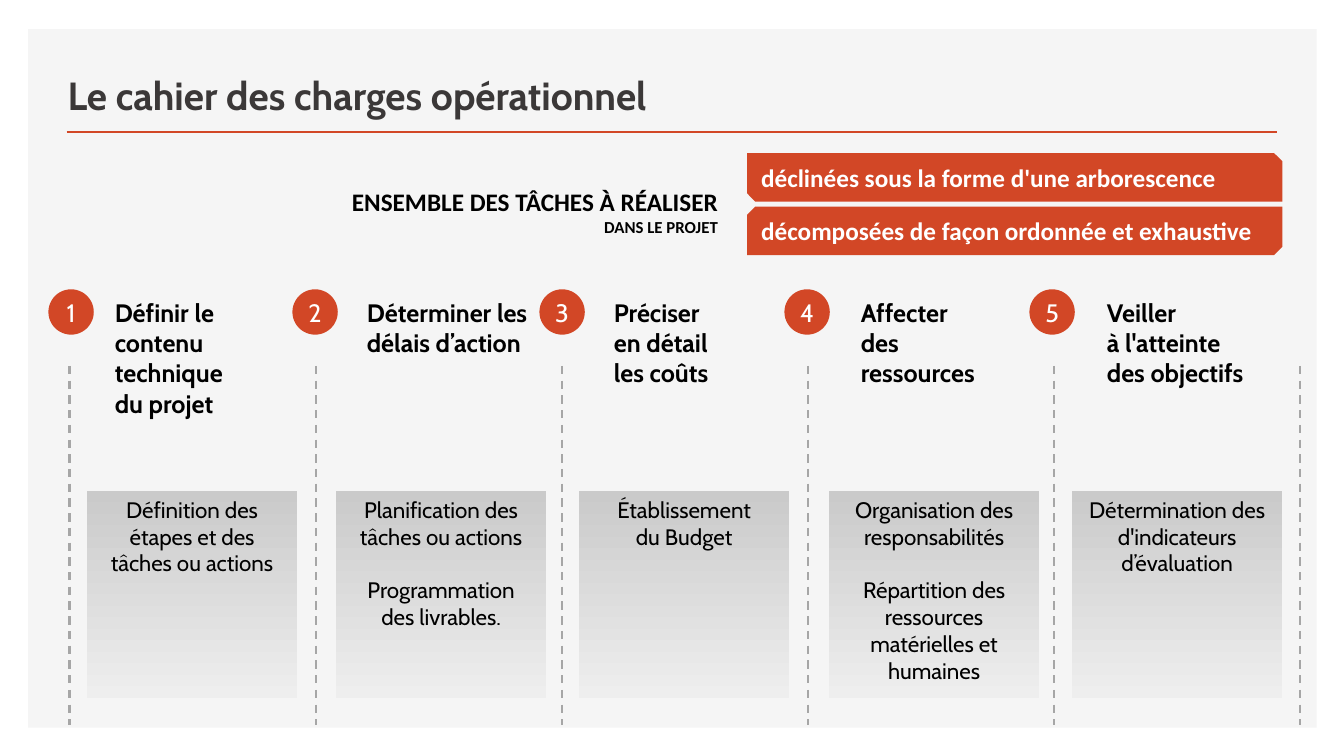
from pptx import Presentation
from pptx.dml.color import RGBColor
from pptx.enum.dml import MSO_LINE
from pptx.enum.shapes import MSO_CONNECTOR, MSO_SHAPE
from pptx.enum.text import MSO_ANCHOR, PP_ALIGN
from pptx.util import Pt
from lxml import etree

# Content
TITLE = "Le cahier des charges opérationnel"
SCOPE = [("ENSEMBLE DES TÂCHES À RÉALISER", 18), ("DANS LE PROJET", 12)]
BANNERS = [  # text, snips of the two diagonals
    ("déclinées sous la forme d'une arborescence", (0, 0.17)),
    ("décomposées de façon ordonnée et exhaustive", (0.17, 0)),
]
STEPS = [  # badge x, heading x, heading width, heading, card x, card blocks
    (48, 104, 194, ["Définir le contenu technique", "du projet"],
     86, [["Définition des étapes et des tâches ou actions"]]),
    (290, 354, 184, ["Déterminer les délais d’action"],
     333, [["Planification des tâches ou actions"],
           ["Programmation", "des livrables."]]),
    (535, 599, 194, ["Préciser", "en détail", "les coûts"],
     574, [["Établissement", "du Budget"]]),
    (778, 844, 147, ["Affecter", "des", "ressources"],
     822, [["Organisation des responsabilités"],
           ["Répartition des ressources matérielles et humaines"]]),
    (1021, 1088, 168, ["Veiller", "à l'atteinte des objectifs"],
     1063, [["Détermination des d'indicateurs d’évaluation"]]),
]
COLORS = {"panel": "F5F5F5", "accent": "D24726", "title": "3B3838",
          "text": "000000", "white": "FFFFFF", "dash": "A6A6A6",
          "card_top": "CACACA", "card_bottom": "EEEEEE"}
PX = 9144  # 100 px to the inch
A_NS = "http://schemas.openxmlformats.org/drawingml/2006/main"


def px(*values):
    return [round(v * PX) for v in values]


def color(name):
    return RGBColor.from_string(COLORS[name])


def write(tf, text, size=18, font="Cabin", fill="text", bold=False,
          align=PP_ALIGN.LEFT, before=0, first=False):
    p = tf.paragraphs[0] if first else tf.add_paragraph()
    p.alignment = align
    p.space_before = Pt(before)
    r = p.add_run()
    r.text = text
    r.font.size, r.font.name, r.font.bold = Pt(size), font, bold
    r.font.color.rgb = color(fill)


def add_shape(kind, x, y, w, h, fill=None):
    sp = s.shapes.add_shape(kind, *px(x, y, w, h))
    sp.shadow.inherit = False
    sp.line.fill.background()
    if fill:
        sp.fill.solid()
        sp.fill.fore_color.rgb = color(fill)
    return sp


def add_text(x, y, w, h):
    tf = s.shapes.add_textbox(*px(x, y, w, h)).text_frame
    tf.word_wrap = True
    return tf


def add_line(x1, y1, x2, y2, stroke, width, dash=None):
    line = s.shapes.add_connector(MSO_CONNECTOR.STRAIGHT, *px(x1, y1, x2, y2))
    line.line.color.rgb = color(stroke)
    line.line.width = Pt(width)
    if dash:
        line.line.dash_style = dash
    etree.SubElement(line._element.spPr, f"{{{A_NS}}}effectLst")


prs = Presentation()
prs.slide_width, prs.slide_height = px(1333, 750)
s = prs.slides.add_slide(prs.slide_layouts[5])

# Panel behind everything, title and its rule
panel = add_shape(MSO_SHAPE.RECTANGLE, 28, 29, 1278, 693, "panel")
s.shapes._spTree.insert(2, panel._element)
title = s.shapes.title
title.left, title.top, title.width, title.height = px(57, 52, 752, 70)
title.text_frame.vertical_anchor = MSO_ANCHOR.BOTTOM
title.text_frame.word_wrap = True
write(title.text_frame, TITLE, size=28, fill="title", bold=True, first=True)
add_line(66, 131, 1267, 131, "accent", 2)

# Scope statement and its two banners
tf = add_text(336, 180, 386, 61)
for i, (text, size) in enumerate(SCOPE):
    write(tf, text, size=size, font="Calibri", bold=True,
          align=PP_ALIGN.RIGHT, first=i == 0)
for i, (text, snips) in enumerate(BANNERS):
    sp = add_shape(MSO_SHAPE.SNIP_2_DIAG_RECTANGLE,
                   741, 152 + 53 * i, 531, 48, "accent")
    sp.adjustments[0], sp.adjustments[1] = snips
    sp.text_frame.word_wrap = True
    write(sp.text_frame, text, font="Calibri", fill="white", bold=True, first=True)

# Dashed column separators
for i in range(len(STEPS) + 1):
    x = 69 + 244 * i
    add_line(x, 363, x, 719, "dash", 1.5, MSO_LINE.DASH)

# Steps: numbered badge, heading, card
for n, (badge_x, head_x, head_w, heading, card_x, blocks) in enumerate(STEPS, 1):
    badge = add_shape(MSO_SHAPE.OVAL, badge_x, 287, 45, 45, "accent")
    tf = badge.text_frame
    tf.margin_left = tf.margin_right = tf.margin_top = tf.margin_bottom = 0
    tf.word_wrap = False
    write(tf, str(n), fill="white", align=PP_ALIGN.CENTER, first=True)

    tf = add_text(head_x, 290, head_w, 101)
    for i, text in enumerate(heading):
        write(tf, text, bold=True, first=i == 0)

    card = add_shape(MSO_SHAPE.RECTANGLE, card_x, 487, 209, 205)
    card.fill.gradient()
    card.fill.gradient_angle = 270
    for stop, name in zip(card.fill.gradient_stops, ("card_top", "card_bottom")):
        stop.color.rgb = color(name)
    tf = card.text_frame
    tf.word_wrap = True
    tf.vertical_anchor = MSO_ANCHOR.TOP
    for b, block in enumerate(blocks):
        for i, text in enumerate(block):
            write(tf, text, size=16, align=PP_ALIGN.CENTER,
                  before=19 if b and i == 0 else 0, first=b == i == 0)

prs.save("out.pptx")
